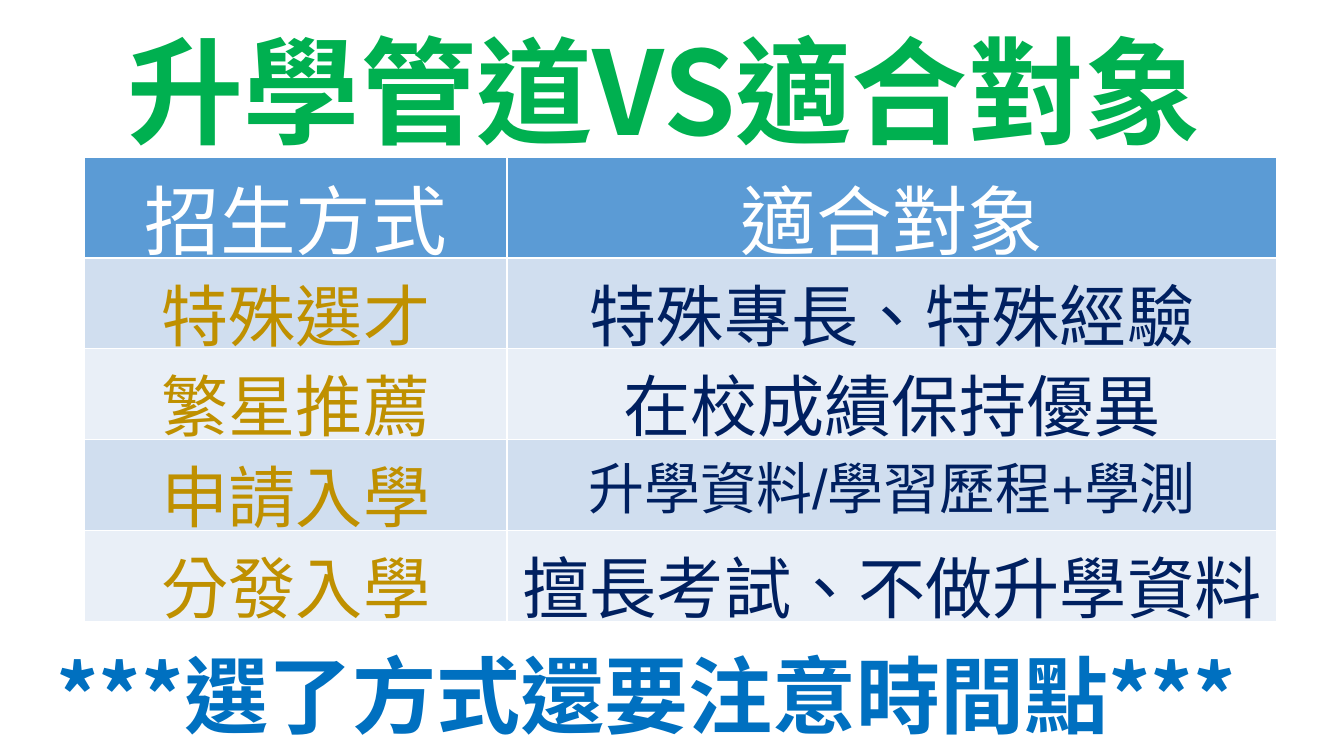
from pptx import Presentation
from pptx.dml.color import RGBColor
from pptx.enum.lang import MSO_LANGUAGE_ID
from pptx.enum.text import MSO_ANCHOR, MSO_AUTO_SIZE, PP_ALIGN
from pptx.oxml.ns import qn
from pptx.util import Pt
from lxml.etree import SubElement

PX = 9144
GREEN = RGBColor(0x00, 0xB0, 0x50)
BLUE = RGBColor(0x00, 0x70, 0xC0)
WHITE = RGBColor(0xFF, 0xFF, 0xFF)
GOLD = RGBColor(0xBF, 0x90, 0x00)
NAVY = RGBColor(0x00, 0x20, 0x60)
HEADER_FILL = RGBColor(0x5B, 0x9B, 0xD5)
ODD_FILL = RGBColor(0xD0, 0xDE, 0xEF)
EVEN_FILL = RGBColor(0xE9, 0xEF, 0xF7)
HEADING_FONT = "Noto Sans CJK TC"
TABLE_FONT = "Arial"


def px(*lengths):
    return [length * PX for length in lengths]


def write_text(text_frame, text, color, **font_values):
    paragraph = text_frame.paragraphs[0]
    paragraph.alignment = PP_ALIGN.CENTER
    run = paragraph.add_run()
    run.text = text
    run.font.color.rgb = color
    run.font.language_id = MSO_LANGUAGE_ID.TRADITIONAL_CHINESE
    for name, value in font_values.items():
        setattr(run.font, name, value)
    return run


presentation = Presentation()
presentation.slide_width, presentation.slide_height = 12192000, 6858000
slide = presentation.slides.add_slide(presentation.slide_layouts[5])

title = slide.shapes.title
title.left, title.top, title.width, title.height = px(33, 14, 1252, 151)
table_frame = slide.shapes.add_table(5, 2, *px(84, 156, 1183, 464))
reminder = slide.shapes.add_textbox(*px(15, 633, 1252, 112))

headings = [
    (title, "升學管道VS適合對象", GREEN, 83),
    (reminder, "***選了方式還要注意時間點***", BLUE, 60),
]
for shape, text, color, size in headings:
    text_frame = shape.text_frame
    text_frame.word_wrap = True
    text_frame.auto_size = MSO_AUTO_SIZE.SHAPE_TO_FIT_TEXT
    text_frame.vertical_anchor = MSO_ANCHOR.TOP
    run = write_text(
        text_frame, text, color, name=HEADING_FONT, size=Pt(size), bold=True
    )
    SubElement(run._r.get_or_add_rPr(), qn("a:ea"), typeface=HEADING_FONT)

rows = [
    ("招生方式", "適合對象"),
    ("特殊選才", "特殊專長、特殊經驗"),
    ("繁星推薦", "在校成績保持優異"),
    ("申請入學", "升學資料/學習歷程+學測"),
    ("分發入學", "擅長考試、不做升學資料"),
]
table = table_frame.table
for column, width in zip(table.columns, px(419, 764)):
    column.width = width

for row_index, texts in enumerate(rows):
    table.rows[row_index].height = 41 * PX
    if row_index == 0:
        fill, colors, sizes = HEADER_FILL, (WHITE, WHITE), (54, 54)
    else:
        fill = ODD_FILL if row_index % 2 else EVEN_FILL
        colors = (GOLD, NAVY)
        sizes = (48, 40 if "/" in texts[1] else 48)
    for column_index, text in enumerate(texts):
        cell = table.cell(row_index, column_index)
        cell.fill.solid()
        cell.fill.fore_color.rgb = fill
        write_text(
            cell.text_frame,
            text,
            colors[column_index],
            name=TABLE_FONT,
            size=Pt(sizes[column_index]),
        )
table_frame.height = 464 * PX

presentation.save("out.pptx")
